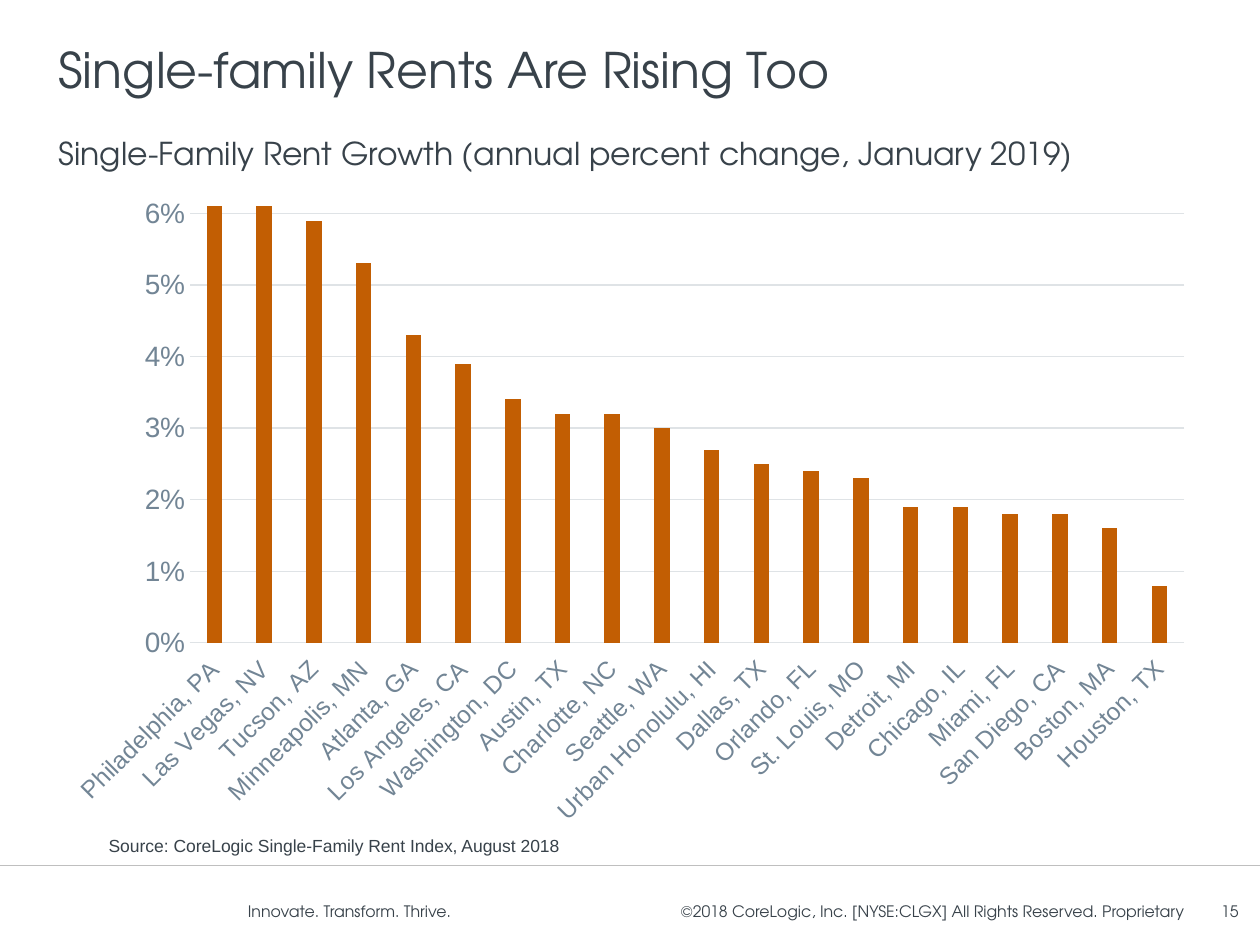
import pptx
import pptx.chart.data
import pptx.dml.color
import pptx.enum.chart
import pptx.enum.shapes
import pptx.enum.text
import pptx.oxml
import pptx.oxml.ns
import pptx.util
from pptx.util import Cm

COLORS = {"text": "38424A", "axis": "728595", "grid": "DFE3E6",
          "bar": "C25E03", "rule": "BFBFBF"}
HEAD_FONT, BODY_FONT = "TeX Gyre Adventor", "Arial"
ALIGN = pptx.enum.text.PP_ALIGN
ANCHOR = pptx.enum.text.MSO_ANCHOR


def style(font, size, name, color="text"):
    font.size = pptx.util.Pt(size)
    font.name = name
    font.color.rgb = pptx.dml.color.RGBColor.from_string(COLORS[color])


def fill_text(sp, text, size, name, align=ALIGN.LEFT, anchor=ANCHOR.TOP, wrap=True):
    tf = sp.text_frame
    tf.auto_size = pptx.enum.text.MSO_AUTO_SIZE.NONE
    tf.word_wrap = wrap
    tf.vertical_anchor = anchor
    p = tf.paragraphs[0]
    p.text = text
    p.alignment = align
    style(p.font, size, name)
    return tf


prs = pptx.Presentation()
prs.slide_width, prs.slide_height = Cm(25.4), Cm(19.05)
s = prs.slides.add_slide(prs.slide_layouts[5])

# Footer rule
line = s.shapes.add_connector(pptx.enum.shapes.MSO_CONNECTOR.STRAIGHT,
                              Cm(0), Cm(17.45), Cm(25.4), Cm(17.45))
line.line.color.rgb = pptx.dml.color.RGBColor.from_string(COLORS["rule"])
line.line.width = pptx.util.Pt(0.75)
line._element.spPr.append(pptx.oxml.parse_xml(
    "<a:effectLst %s/>" % pptx.oxml.ns.nsdecls("a")))

# Title
title = s.shapes.title
title.left, title.top, title.width, title.height = Cm(1.05), Cm(0.32), Cm(23.72), Cm(1.8)
tf = fill_text(title, "Single-family Rents Are Rising Too", 28, HEAD_FONT,
               anchor=ANCHOR.BOTTOM)
tf.margin_left = tf.margin_right = tf.margin_top = tf.margin_bottom = Cm(0.13)

# Subtitle
sp = s.shapes.add_textbox(Cm(1.05), Cm(2.57), Cm(23.7), Cm(1.45))
tf = fill_text(sp, "Single-Family Rent Growth (annual percent change, January 2019)",
               18, HEAD_FONT)
tf.margin_left = tf.margin_right = tf.margin_top = tf.margin_bottom = Cm(0.13)

# Rent growth chart
rents = [
    ("Philadelphia, PA", 0.061), ("Las Vegas, NV", 0.061), ("Tucson, AZ", 0.059),
    ("Minneapolis, MN", 0.053), ("Atlanta, GA", 0.043), ("Los Angeles, CA", 0.039),
    ("Washington, DC", 0.034), ("Austin, TX", 0.032), ("Charlotte, NC", 0.032),
    ("Seattle, WA", 0.03), ("Urban Honolulu, HI", 0.027), ("Dallas, TX", 0.025),
    ("Orlando, FL", 0.024), ("St. Louis, MO", 0.023), ("Detroit, MI", 0.019),
    ("Chicago, IL", 0.019), ("Miami, FL", 0.018), ("San Diego, CA", 0.018),
    ("Boston, MA", 0.016), ("Houston, TX", 0.008),
]
data = pptx.chart.data.CategoryChartData(number_format="0%")
data.categories = [city for city, growth in rents]
data.add_series("Series 1", [growth for city, growth in rents])
chart = s.shapes.add_chart(pptx.enum.chart.XL_CHART_TYPE.COLUMN_CLUSTERED,
                           Cm(1.05), Cm(3.79), Cm(23.29), Cm(13.16), data).chart
chart.has_legend = chart.has_title = False
style(chart.font, 10, BODY_FONT)

plot = chart.plots[0]
plot.gap_width, plot.overlap, plot.vary_by_categories = 219, -27, False
bars = plot.series[0].format.fill
bars.solid()
bars.fore_color.rgb = pptx.dml.color.RGBColor.from_string(COLORS["bar"])

cat, val = chart.category_axis, chart.value_axis
for axis, size in ((cat, 14), (val, 16)):
    axis.major_tick_mark = axis.minor_tick_mark = pptx.enum.chart.XL_TICK_MARK.NONE
    style(axis.tick_labels.font, size, BODY_FONT, "axis")
cat.tick_label_position = pptx.enum.chart.XL_TICK_LABEL_POSITION.LOW
cat._element.txPr.bodyPr.set("rot", "-2700000")
val.minimum_scale, val.maximum_scale, val.major_unit = 0, 0.061, 0.01
val.tick_labels.number_format = "0%"
val.tick_labels.number_format_is_linked = False
val.format.line.fill.background()
for ln in (cat.format.line, val.major_gridlines.format.line):
    ln.color.rgb = pptx.dml.color.RGBColor.from_string(COLORS["grid"])
    ln.width = pptx.util.Pt(0.75)

# Fixed inner plot area, as fractions of the chart
area = chart._chartSpace.chart.plotArea
for old in area.findall(pptx.oxml.ns.qn("c:layout")):
    area.remove(old)
area.insert(0, pptx.oxml.parse_xml(
    "<c:layout %s><c:manualLayout><c:layoutTarget val='inner'/>"
    "<c:xMode val='edge'/><c:yMode val='edge'/><c:x val='0.119'/><c:y val='0.028'/>"
    "<c:w val='0.861'/><c:h val='0.669'/></c:manualLayout></c:layout>"
    % pptx.oxml.ns.nsdecls("c")))

# Source and footer texts
notes = [
    ("Source: CoreLogic Single-Family Rent Index, August 2018",
     (1.94, 16.71, 10.44, 0.89), 10, BODY_FONT, ALIGN.LEFT, ANCHOR.TOP, True),
    ("Innovate. Transform. Thrive.",
     (4.62, 18.06, 4.72, 0.64), 9, HEAD_FONT, ALIGN.RIGHT, ANCHOR.TOP, False),
    ("©2018 CoreLogic, Inc. [NYSE:CLGX] All Rights Reserved. Proprietary",
     (11.05, 18.06, 13.06, 0.64), 9, HEAD_FONT, ALIGN.RIGHT, ANCHOR.TOP, True),
    ("15",
     (22.53, 18.03, 2.69, 0.66), 9, HEAD_FONT, ALIGN.RIGHT, ANCHOR.MIDDLE, True),
]
for text, place, size, font, align, anchor, wrap in notes:
    sp = s.shapes.add_textbox(*[Cm(v) for v in place])
    fill_text(sp, text, size, font, align, anchor, wrap)

prs.save("out.pptx")
